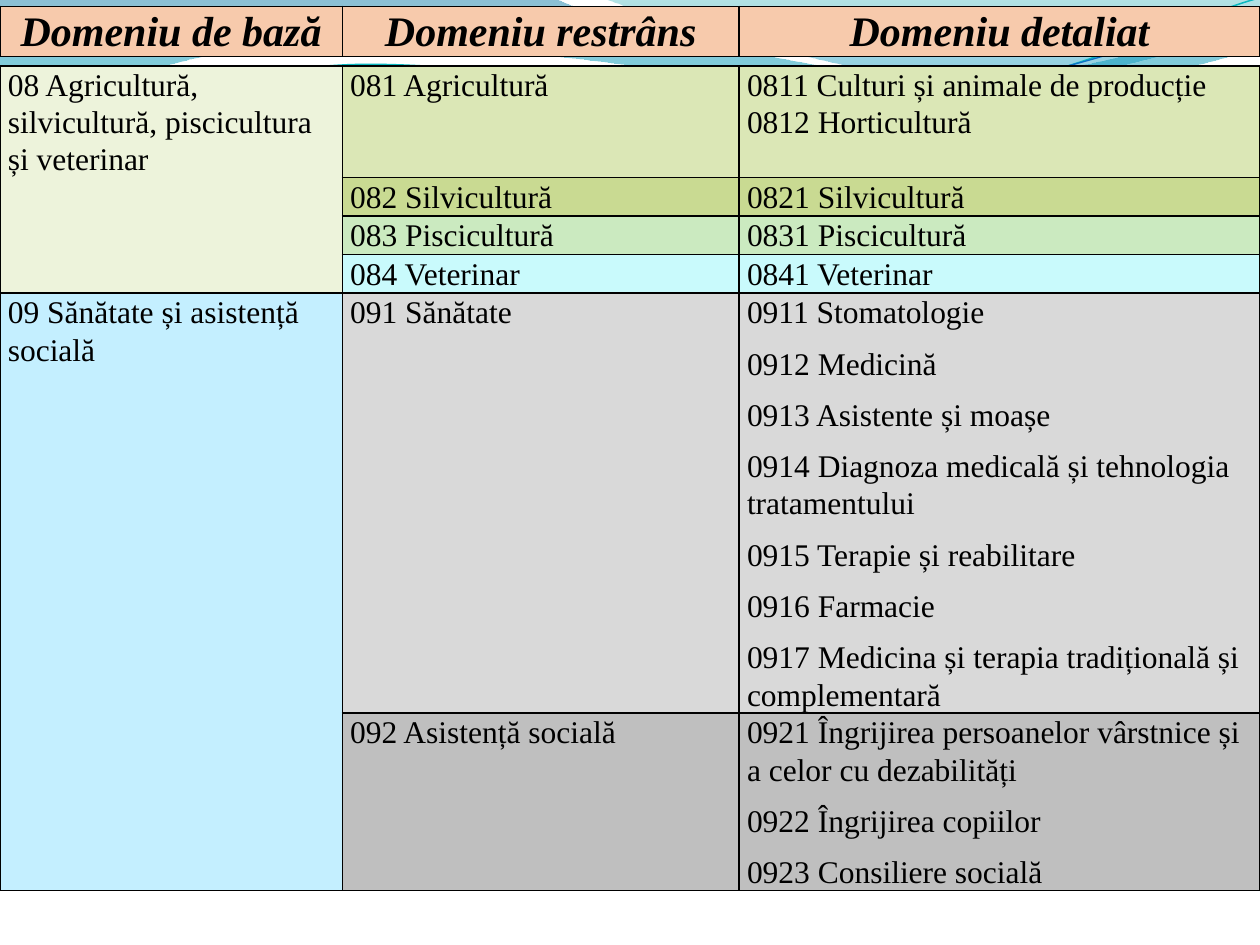
from lxml.etree import SubElement
from pptx import Presentation
from pptx.dml.color import RGBColor
from pptx.enum.text import PP_ALIGN
from pptx.oxml import parse_xml
from pptx.oxml.ns import nsdecls, qn
from pptx.util import Pt

THEME = {
    "font": "Times New Roman", "text": "000000", "border": "000000",
    "header_size": 24, "body_size": 18, "header_fill": "F7CAAC",
}

# Content: each domain has a name, a fill and its narrower fields
HEADERS = ["Domeniu de bază", "Domeniu restrâns", "Domeniu detaliat"]
DOMAINS = [
    ("08 Agricultură, silvicultură, piscicultura și veterinar", "EDF3DB", [
        ("081 Agricultură", "DBE7B6", 64,
         ["0811 Culturi și animale de producție\v0812 Horticultură"]),
        ("082 Silvicultură", "C9DA92", 21.3, ["0821 Silvicultură"]),
        ("083 Piscicultură", "CBEAC0", 21.3, ["0831 Piscicultură"]),
        ("084 Veterinar", "C9FAFC", 21.3, ["0841 Veterinar"]),
    ]),
    ("09 Sănătate și asistență socială", "C4EFFF", [
        ("091 Sănătate", "D9D9D9", 240, [
            "0911 Stomatologie", "0912 Medicină", "0913 Asistente și moașe",
            "0914 Diagnoza medicală și tehnologia tratamentului",
            "0915 Terapie și reabilitare", "0916 Farmacie",
            "0917 Medicina și terapia tradițională și complementară"]),
        ("092 Asistență socială", "BFBFBF", 101, [
            "0921 Îngrijirea persoanelor vârstnice și a celor cu dezabilități",
            "0922 Îngrijirea copiilor", "0923 Consiliere socială"]),
    ]),
]
COLUMN_WIDTHS = [195.6, 226.8, 297.6]
HEADER_TOP, HEADER_HEIGHT, BODY_TOP = 3.6, 28.6, 37.6

# Waves: start point, then line ends (1 point) or Bézier curves (3 points)
# Gradient stops: colour, opacity in percent
FILLED_WAVES = [
    ((0, 0), [[(317, -1)], [(343, 12), (478, 45), (546, 45)],
              [(614, 45), (690, 19), (720, 6)], [(721, 26)],
              [(708, 32), (626, 55), (537, 54)], [(448, 54), (275, 20), (185, 24)],
              [(93, 26), (33, 60), (-1, 81)]],
     [("0074A1", 45), ("00C6CF", 55)]),
    ((345, -1), [[(367, 8), (491, 45), (554, 47)], [(618, 50), (692, 23), (720, 15)],
                 [(720, 0)]],
     [("00A1A9", 30), ("008BBF", 45)]),
]
LINE_WAVES = [
    ((0, 80), [[(35, 67), (114, 41), (199, 37)], [(284, 34), (427, 64), (513, 58)],
               [(600, 51), (675, 11), (719, -1)]], "0AB8BF", 0.85),
    ((0, 75), [[(34, 69), (118, 44), (204, 40)], [(290, 37), (430, 60), (516, 54)],
               [(602, 48), (678, 15), (720, 4)]], "0F6FC6", 0.75),
]


def add_wave(slide, start, segments, close):
    """Freeform whose three-point segments become cubic curves."""
    builder = slide.shapes.build_freeform(*start, scale=Pt(1))
    builder.add_line_segments([point for segment in segments for point in segment],
                              close=close)
    shape = builder.convert_to_shape()
    shape.shadow.inherit = False
    lines = iter(list(shape._element.iter(qn("a:lnTo"))))
    for segment in segments:
        parts = [next(lines) for _ in segment]
        if len(parts) == 3:
            curve = parse_xml(f'<a:cubicBezTo {nsdecls("a")}/>')
            parts[0].addprevious(curve)
            for part in parts:
                curve.append(part[0])
                part.getparent().remove(part)
    return shape


def add_filled_wave(slide, start, segments, stops):
    shape = add_wave(slide, start, segments, close=True)
    shape.line.fill.background()
    shape.fill.gradient()
    shape.fill.gradient_angle = 270
    for position, (stop, (color, _)) in enumerate(zip(shape.fill.gradient_stops, stops)):
        stop.position = position
        stop.color.rgb = RGBColor.from_string(color)
    gradient = shape._element.spPr.find(qn("a:gradFill"))
    for element, (_, opacity) in zip(gradient.iter(qn("a:srgbClr")), stops):
        SubElement(element, qn("a:alpha"), val=str(opacity * 1000))


def add_line_wave(slide, start, segments, color, width):
    shape = add_wave(slide, start, segments, close=False)
    shape.fill.background()
    shape.line.color.rgb = RGBColor.from_string(color)
    shape.line.width = Pt(width)


def add_grid(slide, top, row_heights):
    frame = slide.shapes.add_table(len(row_heights), len(COLUMN_WIDTHS), 0, Pt(top),
                                   Pt(sum(COLUMN_WIDTHS)), Pt(sum(row_heights)))
    table = frame.table
    table.first_row = table.horz_banding = False
    for column, width in zip(table.columns, COLUMN_WIDTHS):
        column.width = Pt(width)
    for row, height in zip(table.rows, row_heights):
        row.height = Pt(height)
    return table


def fill_cell(cell, lines, color, size, margin, header=False, borders="LRTB"):
    cell.fill.solid()
    cell.fill.fore_color.rgb = RGBColor.from_string(color)
    cell.margin_left = cell.margin_right = Pt(margin)
    cell.margin_top = cell.margin_bottom = 0
    visible = f'<a:solidFill><a:srgbClr val="{THEME["border"]}"/></a:solidFill>'
    for index, side in enumerate("LRTB"):
        paint = visible if side in borders else "<a:noFill/>"
        cell._tc.tcPr.insert(index, parse_xml(
            f'<a:ln{side} {nsdecls("a")} w="12700">{paint}</a:ln{side}>'))
    for index, line in enumerate(lines):
        text_frame = cell.text_frame
        paragraph = text_frame.add_paragraph() if index else text_frame.paragraphs[0]
        paragraph.text = line
        paragraph.alignment = PP_ALIGN.CENTER if header else PP_ALIGN.LEFT
        paragraph.line_spacing = 1.07
        paragraph.space_after = Pt(8)
        font = paragraph.font
        font.name, font.size = THEME["font"], Pt(size)
        font.bold = font.italic = header
        font.color.rgb = RGBColor.from_string(THEME["text"])


def main():
    presentation = Presentation()
    presentation.slide_width, presentation.slide_height = Pt(720), Pt(540)
    slide = presentation.slides.add_slide(presentation.slide_layouts[6])

    # Background waves
    for wave in FILLED_WAVES:
        add_filled_wave(slide, *wave)
    for wave in LINE_WAVES:
        add_line_wave(slide, *wave)

    # Header table
    header = add_grid(slide, HEADER_TOP, [HEADER_HEIGHT])
    for cell, title in zip(header.rows[0].cells, HEADERS):
        fill_cell(cell, [title], THEME["header_fill"], THEME["header_size"], 5, header=True)

    # Domain table: the first column is framed once around each domain
    heights = [field[2] for _, _, fields in DOMAINS for field in fields]
    body = add_grid(slide, BODY_TOP, heights)
    size, margin, row = THEME["body_size"], 4.5, 0
    for domain, domain_color, fields in DOMAINS:
        for index, (name, color, _, details) in enumerate(fields):
            is_first, is_last = index == 0, index == len(fields) - 1
            frame = "LR" + "T" * is_first + "B" * is_last
            fill_cell(body.cell(row, 0), [domain] if is_first else [], domain_color,
                      size, margin, borders=frame)
            fill_cell(body.cell(row, 1), [name], color, size, margin)
            fill_cell(body.cell(row, 2), details, color, size, margin)
            row += 1

    presentation.save("out.pptx")


if __name__ == "__main__":
    main()
